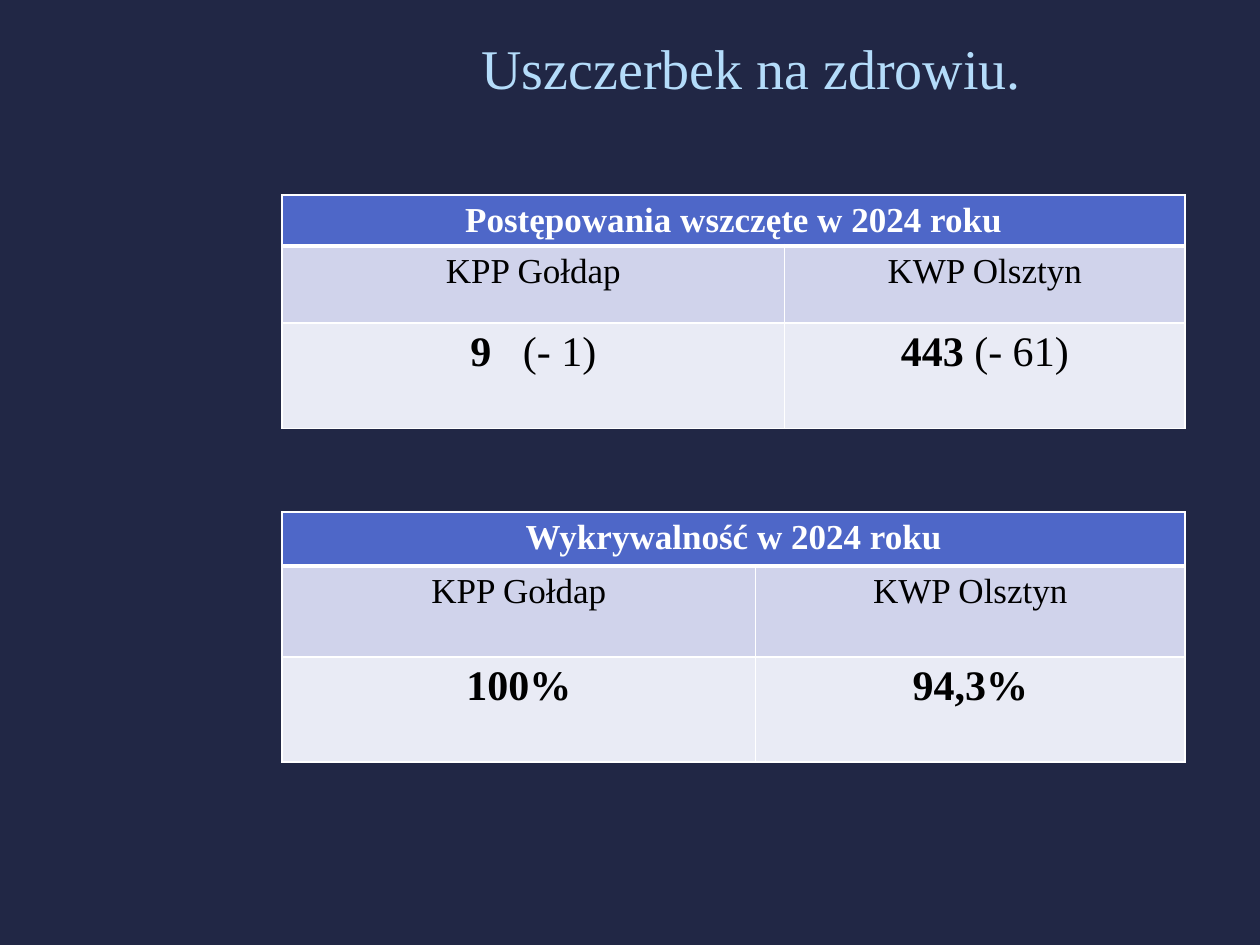
from lxml import etree
from pptx import Presentation
from pptx.dml.color import RGBColor
from pptx.enum.text import MSO_ANCHOR, PP_ALIGN
from pptx.oxml.ns import qn
from pptx.util import Pt

CENTER = PP_ALIGN.CENTER
MIDDLE = MSO_ANCHOR.MIDDLE
FONT = "Times New Roman"
WHITE = "FFFFFF"
BLACK = "000000"
HEADER_FILL = "4E67C8"
UNITS_FILL = "D0D3EB"
VALUES_FILL = "E9EBF5"
UNITS = ("KPP Gołdap", "KWP Olsztyn")
TABLE_LEFT = 161.25
TABLE_WIDTH = 516


def color(hex_value):
    """Return the colour for a hex string."""
    return RGBColor.from_string(hex_value)


def add_text(paragraph, text, size=20, bold=False, ink=BLACK):
    """Add a formatted run to a centred paragraph."""
    paragraph.alignment = CENTER
    run = paragraph.add_run()
    run.text = text
    run.font.name = FONT
    run.font.size = Pt(size)
    run.font.bold = bold
    run.font.color.rgb = color(ink)


def style_cell(cell, fill, top=1, bottom=1):
    """Give a cell white borders and a solid fill."""
    properties = cell._tc.get_or_add_tcPr()
    for side, width in (("L", 1), ("R", 1), ("T", top), ("B", bottom)):
        border = etree.SubElement(properties, qn(f"a:ln{side}"), w=str(Pt(width)))
        solid = etree.SubElement(border, qn("a:solidFill"))
        etree.SubElement(solid, qn("a:srgbClr"), val=WHITE)
    cell.margin_bottom = 0
    cell.fill.solid()
    cell.fill.fore_color.rgb = color(fill)


def add_title(slide, text):
    """Add the slide title."""
    frame = slide.shapes.add_textbox(Pt(139), 0, Pt(581), Pt(77)).text_frame
    frame.word_wrap = True
    frame.vertical_anchor = MIDDLE
    add_text(frame.paragraphs[0], text, size=32, ink="B4DCFA")


def add_comparison(slide, top, heading, values, first_width, heights):
    """Add a table comparing both units; each value is a bold and a plain part."""
    table = slide.shapes.add_table(
        3, 2, Pt(TABLE_LEFT), Pt(top), Pt(TABLE_WIDTH), Pt(sum(heights))
    ).table
    for column, width in zip(table.columns, (first_width, TABLE_WIDTH - first_width)):
        column.width = Pt(width)
    for row, height in zip(table.rows, heights):
        row.height = Pt(height)

    table.cell(0, 0).merge(table.cell(0, 1))
    add_text(table.cell(0, 0).text_frame.paragraphs[0], heading, bold=True, ink=WHITE)
    for index, (unit, (figure, change)) in enumerate(zip(UNITS, values)):
        header_cell, unit_cell, value_cell = (table.cell(row, index) for row in range(3))
        style_cell(header_cell, HEADER_FILL, bottom=3)
        style_cell(unit_cell, UNITS_FILL, top=3)
        style_cell(value_cell, VALUES_FILL)
        add_text(unit_cell.text_frame.paragraphs[0], unit)
        value = value_cell.text_frame.paragraphs[0]
        add_text(value, figure, size=24, bold=True)
        if change:
            add_text(value, change, size=24)


def main():
    """Build the slide and save it."""
    presentation = Presentation()
    presentation.slide_width = Pt(720)
    presentation.slide_height = Pt(540)
    slide = presentation.slides.add_slide(presentation.slide_layouts[6])
    slide.background.fill.solid()
    slide.background.fill.fore_color.rgb = color("212745")

    add_comparison(
        slide, 111.5, "Postępowania wszczęte w 2024 roku",
        (("9   ", "(- 1)"), ("443", " (- 61)")), 287, (29, 44, 60.5),
    )
    add_comparison(
        slide, 292.5, "Wykrywalność w 2024 roku",
        (("100%", ""), ("94,3%", "")), 270.5, (31, 52, 60),
    )
    add_title(slide, "Uszczerbek na zdrowiu.")
    presentation.save("out.pptx")


if __name__ == "__main__":
    main()
